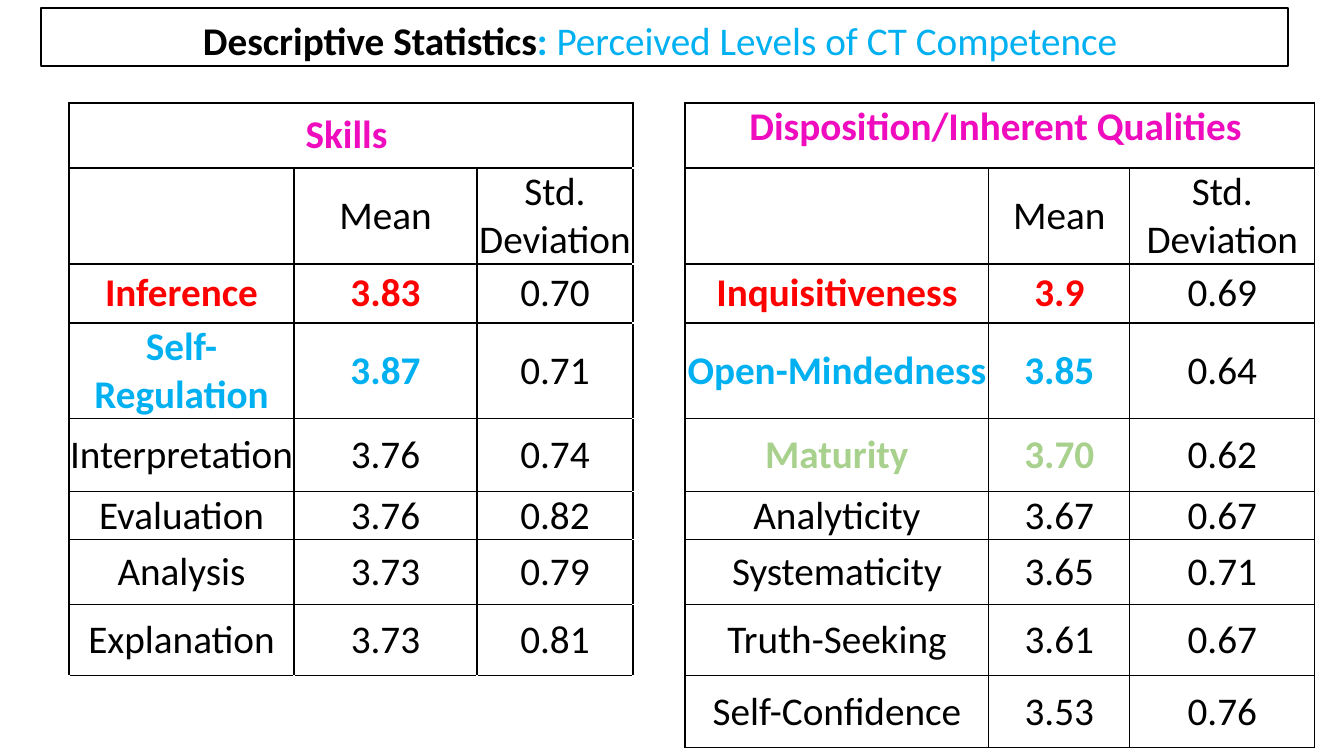
from pptx import Presentation
from pptx.dml.color import RGBColor
from pptx.enum.shapes import MSO_SHAPE
from pptx.enum.text import MSO_ANCHOR, MSO_AUTO_SIZE, PP_ALIGN
from pptx.oxml.ns import qn
from pptx.util import Pt
from lxml.etree import SubElement

EMU_PER_PX = 914400 / 100.8
WHITE = RGBColor(0xFF, 0xFF, 0xFF)
BLACK = RGBColor(0x00, 0x00, 0x00)
MAGENTA = RGBColor(0xEF, 0x0B, 0xBE)
RED = RGBColor(0xFF, 0x00, 0x00)
BLUE = RGBColor(0x00, 0xB0, 0xF0)
GREEN = RGBColor(0xA9, 0xD1, 0x8E)

COLUMN_WIDTHS = [225, 183, 30, 126, 52, 260, 44, 141, 185]
ROW_HEIGHTS = [37, 65, 96, 59, 95, 73, 48, 65, 71, 72]
GAP_COLUMN = 4
SKILL_COLUMNS = [0, 1, 2]
QUALITY_COLUMNS = [5, 7, 8]
HEADINGS = ("", "Mean", "Std. Deviation")
SKILLS = [
    HEADINGS,
    ("Inference", "3.83", "0.70"),
    ("Self-Regulation", "3.87", "0.71"),
    ("Interpretation", "3.76", "0.74"),
    ("Evaluation", "3.76", "0.82"),
    ("Analysis", "3.73", "0.79"),
    ("Explanation", "3.73", "0.81"),
]
QUALITIES = [
    HEADINGS,
    ("Inquisitiveness", "3.9", "0.69"),
    ("Open-Mindedness", "3.85", "0.64"),
    ("Maturity", "3.70", "0.62"),
    ("Analyticity", "3.67", "0.67"),
    ("Systematicity", "3.65", "0.71"),
    ("Truth-Seeking", "3.61", "0.67"),
    ("Self-Confidence", "3.53", "0.76"),
]
HIGHLIGHTS = {
    "Inference": RED,
    "Inquisitiveness": RED,
    "Self-Regulation": BLUE,
    "Open-Mindedness": BLUE,
    "Maturity": GREEN,
}


def px(length):
    """Turn a length in px into EMU."""
    return round(length * EMU_PER_PX)


def add_span(para, text, color, bold):
    """Add one formatted run to a paragraph."""
    span = para.add_run()
    span.text = text
    formats = {"name": "Calibri", "size": Pt(28), "bold": bold}
    for name, value in formats.items():
        setattr(span.font, name, value)
    span.font.color.rgb = color


def fill_cell(cell, text, color=BLACK, bold=False, anchor=MSO_ANCHOR.MIDDLE):
    """Write centred text into a table cell."""
    cell.vertical_anchor = anchor
    para = cell.text_frame.paragraphs[0]
    para.alignment = PP_ALIGN.CENTER
    if text:
        add_span(para, text, color, bold)


def in_block(row, column):
    """Tell whether a grid position belongs to one of the two ruled blocks."""
    if column < GAP_COLUMN:
        return 0 <= column and 1 <= row <= len(SKILLS) + 1
    return GAP_COLUMN < column < len(COLUMN_WIDTHS) and 1 <= row <= len(QUALITIES) + 1


def style_cell(cell, row, column):
    """Set margins, borders and fill of the cell at a grid position."""
    for side in ("left", "right", "top", "bottom"):
        setattr(cell, f"margin_{side}", 0)
    properties = cell._tc.get_or_add_tcPr()
    neighbours = {
        "a:lnL": (row, column - 1),
        "a:lnR": (row, column + 1),
        "a:lnT": (row - 1, column),
        "a:lnB": (row + 1, column),
    }
    for tag, neighbour in neighbours.items():
        ruled = in_block(row, column) or in_block(*neighbour)
        line = SubElement(properties, qn(tag), w=str(Pt(1)))
        solid = SubElement(line, qn("a:solidFill"))
        SubElement(solid, qn("a:srgbClr"), val=str(BLACK if ruled else WHITE))
    cell.fill.solid()
    cell.fill.fore_color.rgb = WHITE


def merge_cells(table):
    """Join the cells that span several grid columns."""
    spans = [(0, 0, 2), (0, 3, 5), (0, 6, 7), (1, 0, 3), (1, 5, 8)]
    for row in range(2, len(ROW_HEIGHTS)):
        spans += [(row, 2, 3), (row, 5, 6)]
    for row, first, last in spans:
        table.cell(row, first).merge(table.cell(row, last))


def fill_block(table, columns, title, anchor, records):
    """Write the title and the records of one block."""
    fill_cell(table.cell(1, columns[0]), title, MAGENTA, True, anchor)
    for row, record in enumerate(records, start=2):
        highlight = HIGHLIGHTS.get(record[0])
        for column, text in zip(columns, record):
            marked = highlight is not None and column != columns[-1]
            fill_cell(table.cell(row, column), text, highlight if marked else BLACK, marked)


def add_statistics(page, box):
    """Place the table with both blocks of statistics."""
    frame = page.shapes.add_table(len(ROW_HEIGHTS), len(COLUMN_WIDTHS), *map(px, box))
    table = frame.table
    for name, value in {"first_row": False, "horz_banding": False}.items():
        setattr(table, name, value)
    for column, width in zip(table.columns, COLUMN_WIDTHS):
        column.width = px(width)
    for row, height in zip(table.rows, ROW_HEIGHTS):
        row.height = px(height)
    for row in range(len(ROW_HEIGHTS)):
        for column in range(len(COLUMN_WIDTHS)):
            style_cell(table.cell(row, column), row, column)
    merge_cells(table)
    fill_block(table, SKILL_COLUMNS, "Skills ", MSO_ANCHOR.MIDDLE, SKILLS)
    fill_block(table, QUALITY_COLUMNS, "Disposition/Inherent Qualities ", MSO_ANCHOR.TOP, QUALITIES)


def add_title(page, box):
    """Place the framed title."""
    title = page.shapes.add_shape(MSO_SHAPE.RECTANGLE, *map(px, box))
    title.shadow.inherit = False
    title.fill.solid()
    title.fill.fore_color.rgb = WHITE
    title.line.color.rgb = BLACK
    title.line.width = Pt(1)
    frame = title.text_frame
    formats = {
        "word_wrap": True,
        "auto_size": MSO_AUTO_SIZE.SHAPE_TO_FIT_TEXT,
        "vertical_anchor": MSO_ANCHOR.TOP,
    }
    for name, value in formats.items():
        setattr(frame, name, value)
    para = frame.paragraphs[0]
    spacing = {"alignment": PP_ALIGN.CENTER, "line_spacing": 1.07, "space_after": Pt(8)}
    for name, value in spacing.items():
        setattr(para, name, value)
    add_span(para, "Descriptive Statistics", BLACK, True)
    add_span(para, ": ", BLUE, True)
    add_span(para, "Perceived Levels of CT Competence ", BLUE, False)


def main():
    """Build the deck and save it."""
    deck = Presentation()
    deck.slide_width = px(1344)
    deck.slide_height = px(756)
    page = deck.slides.add_slide(deck.slide_layouts[6])
    add_statistics(page, (69, 66, sum(COLUMN_WIDTHS), sum(ROW_HEIGHTS)))
    add_title(page, (41, 8, 1247, 58))
    deck.save("out.pptx")


if __name__ == "__main__":
    main()
